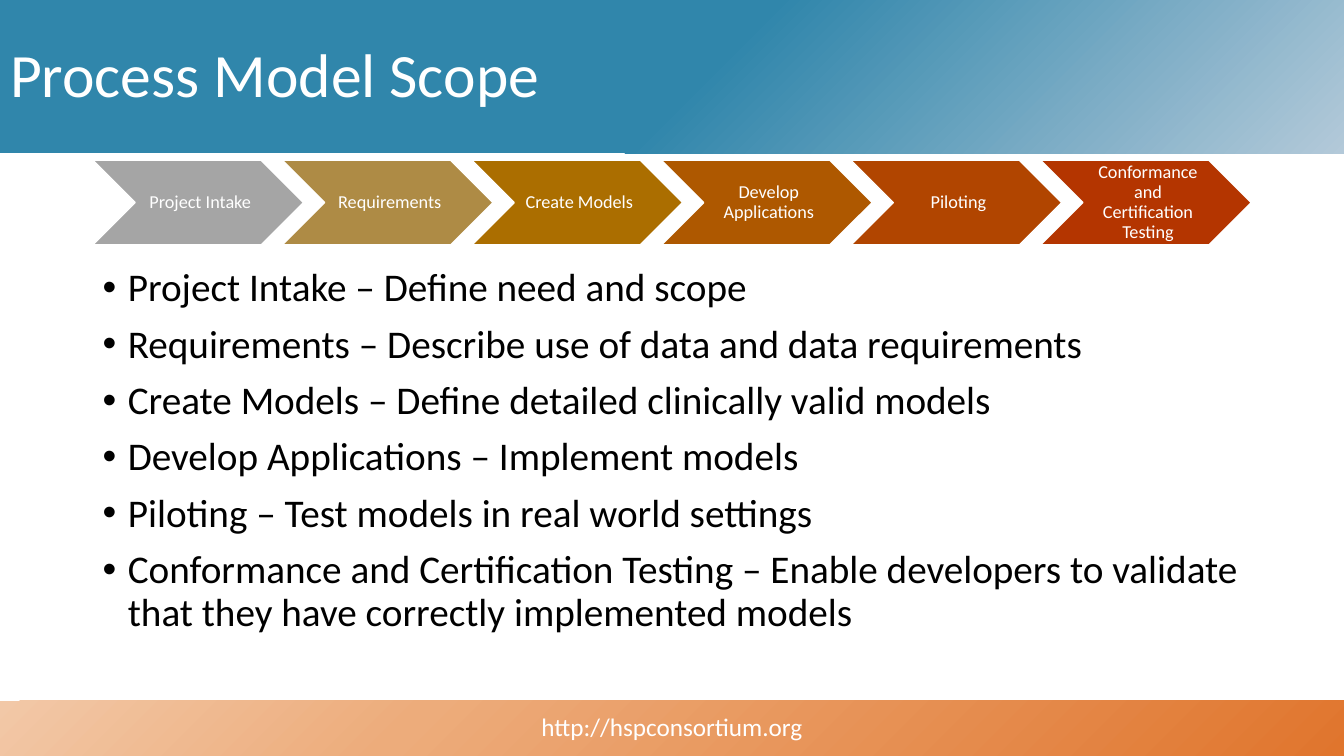
from lxml import etree
from pptx import Presentation
from pptx.dml.color import RGBColor
from pptx.enum.shapes import MSO_SHAPE as Shape
from pptx.enum.text import MSO_ANCHOR as Anchor, MSO_AUTO_SIZE as Fit, PP_ALIGN as Align
from pptx.oxml import parse_xml
from pptx.oxml.ns import nsdecls, qn
from pptx.util import Inches, Pt

WHITE = RGBColor(0xFF, 0xFF, 0xFF)
BLACK = RGBColor(0x00, 0x00, 0x00)
HEAD = [(0, "B3C9D9"), (48, "3086AB"), (97, "3086AB")]
FOOT = [(0, "E0752D"), (69, "EDAC7B"), (100, "F2C8A7")]
STEPS = [
    ("Project Intake", RGBColor(0xA5, 0xA5, 0xA5), "Define need and scope"),
    ("Requirements", RGBColor(0xAE, 0x8B, 0x45), "Describe use of data and data requirements"),
    ("Create Models", RGBColor(0xAB, 0x6E, 0x00), "Define detailed clinically valid models"),
    ("Develop Applications", RGBColor(0xAE, 0x58, 0x00), "Implement models"),
    ("Piloting", RGBColor(0xB1, 0x45, 0x00), "Test models in real world settings"),
    ("Conformance and Certification Testing", RGBColor(0xB4, 0x35, 0x00),
     "Enable developers to validate that they have correctly implemented models"),
]


def write(shape, lines, size, color=WHITE, align=Align.LEFT, anchor=Anchor.MIDDLE,
          inset=(0.1, 0.05, 0.1, 0.05), bullet=None, gap=0):
    """Fill a shape with one paragraph per line; gap is the points between them."""
    frame = shape.text_frame
    frame.word_wrap = True
    frame.auto_size = Fit.NONE
    frame.vertical_anchor = anchor
    (frame.margin_left, frame.margin_top,
     frame.margin_right, frame.margin_bottom) = map(Inches, inset)
    for i, line in enumerate(lines):
        para = frame.add_paragraph() if i else frame.paragraphs[0]
        para.text = line
        para.alignment = align
        para.line_spacing = 0.9
        para.space_before = Pt(gap if i else 0)
        if bullet:
            props = para._p.get_or_add_pPr()
            props.set("marL", str(Inches(0.25)))
            props.set("indent", str(Inches(-0.25)))
            etree.SubElement(props, qn("a:buFont")).set("typeface", "Arial")
            etree.SubElement(props, qn("a:buChar")).set("char", bullet)
        font = para.runs[0].font
        font.name = "Calibri"
        font.size = Pt(size)
        font.color.rgb = color


def band(top, height, stops):
    """Add a full-width bar with a radial gradient from its lower right corner."""
    bar = slide.shapes.add_shape(Shape.RECTANGLE, 0, Inches(top), deck.slide_width, Inches(height))
    bar.shadow.inherit = False
    bar.line.fill.background()
    bar.fill.gradient()
    marks = "".join(f'<a:gs pos="{pos * 1000}"><a:srgbClr val="{tint}"/></a:gs>'
                    for pos, tint in stops)
    old = bar._element.spPr.find(qn("a:gradFill"))
    old.getparent().replace(old, parse_xml(
        f'<a:gradFill {nsdecls("a")} rotWithShape="1"><a:gsLst>{marks}</a:gsLst>'
        '<a:path path="circle"><a:fillToRect l="100000" t="100000"/></a:path></a:gradFill>'))
    return bar


deck = Presentation()
deck.slide_width = Inches(13.33)
deck.slide_height = Inches(7.5)
slide = deck.slides.add_slide(deck.slide_layouts[5])

# Header and footer bands
band(0, 1.52, HEAD)
foot = band(6.95, 0.55, FOOT)
write(foot, ["http://hspconsortium.org"], 18, align=Align.CENTER)

# Process chevrons
for i, (name, color, _) in enumerate(STEPS):
    step = slide.shapes.add_shape(Shape.CHEVRON, Inches(0.92 + 1.88 * i), Inches(1.59),
                                  Inches(2.09), Inches(0.84))
    step.shadow.inherit = False
    step.fill.solid()
    step.fill.fore_color.rgb = color
    step.line.color.rgb = WHITE
    step.line.width = Pt(1)
    write(step, [name], 13, align=Align.CENTER, inset=(0.06, 0.02, 0.02, 0.02))

# Title, brought in front of the header band
title = slide.shapes.title
title.left, title.top = Inches(0), Inches(0.04)
title.width, title.height = deck.slide_width, Inches(1.45)
write(title, ["Process Model Scope"], 44)
slide.shapes._spTree.append(title._element)

# Step descriptions
body = slide.shapes.add_textbox(Inches(0.92), Inches(2.61), Inches(11.5), Inches(4.01))
write(body, [f"{name} – {goal}" for name, _, goal in STEPS], 28, color=BLACK,
      anchor=Anchor.TOP, bullet="•", gap=10)

deck.save("out.pptx")
